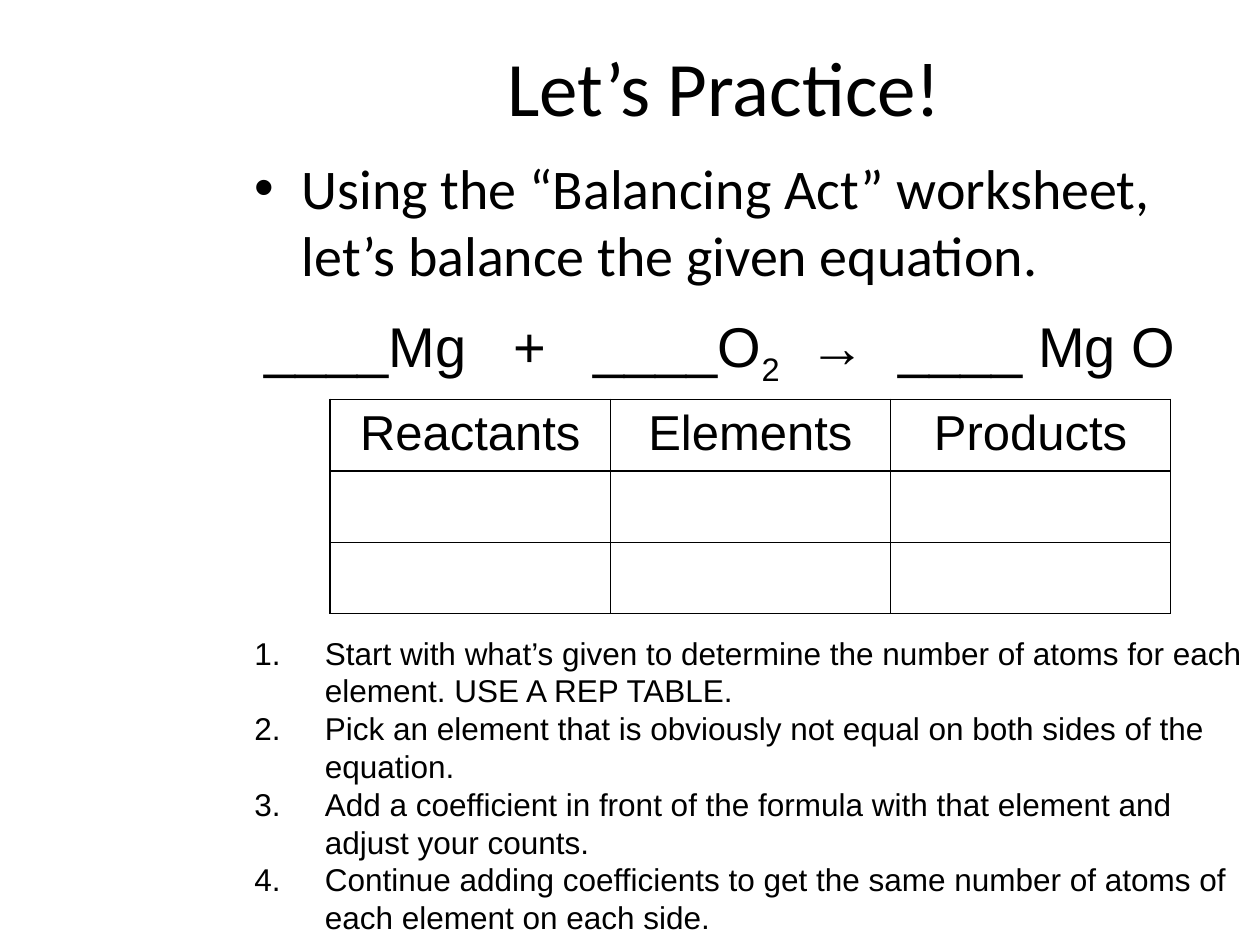
from lxml.etree import SubElement
from pptx import Presentation
from pptx.dml.color import RGBColor
from pptx.enum.text import MSO_ANCHOR, MSO_AUTO_SIZE, PP_ALIGN
from pptx.oxml import parse_xml
from pptx.oxml.ns import nsdecls, qn
from pptx.util import Inches, Pt

COLORS = {"text": "000000", "border": "000000", "cell": "FFFFFF"}
HEADERS = ["Reactants", "Elements", "Products"]
STEPS = [
    "Start with what’s given to determine the number of atoms for each element. USE A REP TABLE.",
    "Pick an element that is obviously not equal on both sides of the equation.",
    "Add a coefficient in front of the formula with that element and adjust your counts.",
    "Continue adding coefficients to get the same number of atoms of each element on each side.",
]
EQUATION = [("____Mg\t+\t____O", False), ("2", True), ("\t→\t____ Mg O", False)]
EQUATION_TABS = [1.98, 2.61, 4.33, 5.03]


def style_font(paragraph, name, size):
    """Set the typeface, size and text colour of a paragraph."""
    paragraph.font.name = name
    paragraph.font.size = Pt(size)
    paragraph.font.color.rgb = RGBColor.from_string(COLORS["text"])


def fill_placeholder(placeholder, box, text, size):
    """Move a placeholder to its box and write its text."""
    placeholder.left, placeholder.top, placeholder.width, placeholder.height = map(Inches, box)
    frame = placeholder.text_frame
    frame.text = text
    frame.auto_size = MSO_AUTO_SIZE.NONE
    style_font(frame.paragraphs[0], "Calibri", size)
    return frame


def add_text_frame(slide, box):
    """Add a wrapping text box and return its text frame."""
    frame = slide.shapes.add_textbox(*map(Inches, box)).text_frame
    frame.word_wrap = True
    return frame


def add_equation(slide, box):
    """Write the unbalanced equation, spaced by tab stops."""
    paragraph = add_text_frame(slide, box).paragraphs[0]
    tab_list = SubElement(paragraph._p.get_or_add_pPr(), qn("a:tabLst"))
    for position in EQUATION_TABS:
        SubElement(tab_list, qn("a:tab"), pos=str(Inches(position)), algn="l")
    style_font(paragraph, "Arial", 32)
    for text, is_subscript in EQUATION:
        run = paragraph.add_run()
        run.text = text
        if is_subscript:
            run.font._element.set("baseline", "-25000")


def add_steps(slide, box):
    """Write the numbered balancing steps."""
    frame = add_text_frame(slide, box)
    for index, step in enumerate(STEPS):
        paragraph = frame.add_paragraph() if index else frame.paragraphs[0]
        paragraph.text = step
        properties = paragraph._p.get_or_add_pPr()
        properties.set("marL", str(Inches(0.56)))
        properties.set("indent", str(-Inches(0.56)))
        SubElement(properties, qn("a:buFont"), typeface="+mj-lt")
        SubElement(properties, qn("a:buAutoNum"), type="arabicPeriod")
        style_font(paragraph, "Arial", 18)


def format_cell(cell):
    """Give a table cell a plain fill and thin borders."""
    cell.fill.solid()
    cell.fill.fore_color.rgb = RGBColor.from_string(COLORS["cell"])
    properties = cell._tc.get_or_add_tcPr()
    for position, side in enumerate(["lnL", "lnR", "lnT", "lnB"]):
        border = parse_xml(
            f'<a:{side} {nsdecls("a")} w="{Pt(1)}"><a:solidFill>'
            f'<a:srgbClr val="{COLORS["border"]}"/></a:solidFill></a:{side}>'
        )
        properties.insert(position, border)


def add_count_table(slide, box):
    """Add the table for counting atoms on both sides."""
    table = slide.shapes.add_table(3, len(HEADERS), *map(Inches, box)).table
    table.first_row = False
    table.horz_banding = False
    for cell in table.iter_cells():
        format_cell(cell)
    for column, header in enumerate(HEADERS):
        cell = table.cell(0, column)
        cell.text = header
        paragraph = cell.text_frame.paragraphs[0]
        paragraph.alignment = PP_ALIGN.CENTER
        style_font(paragraph, "Arial", 28)


def main():
    """Build the practice slide and save it."""
    presentation = Presentation()
    presentation.slide_width = Inches(10)
    presentation.slide_height = Inches(7.5)
    slide = presentation.slides.add_slide(presentation.slide_layouts[1])
    title = fill_placeholder(slide.shapes.title, (2, 0.3, 7.5, 0.76), "Let’s Practice!", 44)
    title.vertical_anchor = MSO_ANCHOR.MIDDLE
    title.paragraphs[0].alignment = PP_ALIGN.CENTER
    body = fill_placeholder(
        slide.placeholders[1],
        (1.92, 1.17, 8.08, 1.33),
        "Using the “Balancing Act” worksheet, let’s balance the given equation.",
        32,
    )
    body.paragraphs[0].space_before = Pt(0)
    add_equation(slide, (2, 2.42, 7.58, 0.64))
    add_steps(slide, (1.92, 4.98, 8.08, 2.52))
    add_count_table(slide, (2.62, 3.17, 6.67, 1.7))
    presentation.save("out.pptx")


if __name__ == "__main__":
    main()
